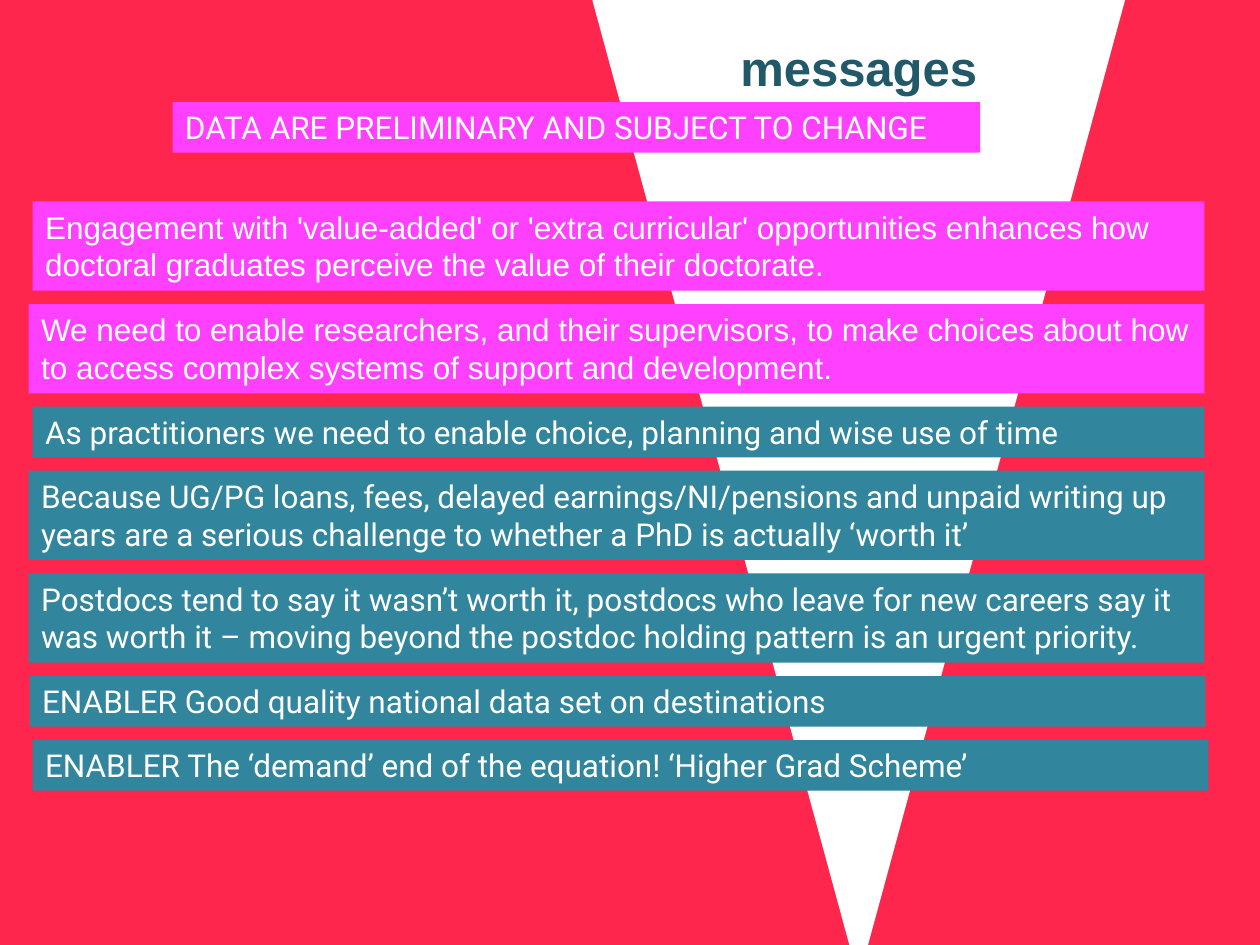
import pptx
import pptx.dml.color
import pptx.enum.shapes
import pptx.enum.text
import pptx.util
from pptx.util import Cm

THEME = {
    "background": "FF264D",
    "wedge": "FFFFFF",
    "heading": "215968",
    "pink": "FF40FF",
    "teal": "31859C",
    "text": "FFFFFF",
    "heading_size": 28,
    "body_size": 18,
    "sans": "Arial",
    "accent": "Roboto",
}

HEADING = "messages"
CAVEAT = "DATA ARE PRELIMINARY AND SUBJECT TO CHANGE"

# text, fill, font, lines, left, width
MESSAGES = [
    ("Engagement with 'value-added' or 'extra curricular' opportunities enhances how "
     "doctoral graduates perceive the value of their doctorate.",
     "pink", "sans", 2, 0.66, 23.62),
    ("We need to enable researchers, and their supervisors, to make choices about how "
     "to access complex systems of support and development.",
     "pink", "sans", 2, 0.58, 23.7),
    ("As practitioners we need to enable choice, planning and wise use of time",
     "teal", "accent", 1, 0.66, 23.62),
    ("Because UG/PG loans, fees, delayed earnings/NI/pensions and unpaid writing up "
     "years are a serious challenge to whether a PhD is actually ‘worth it’",
     "teal", "accent", 2, 0.58, 23.7),
    ("Postdocs tend to say it wasn’t worth it, postdocs who leave for new careers say it "
     "was worth it – moving beyond the postdoc holding pattern is an urgent priority.",
     "teal", "accent", 2, 0.58, 23.7),
    ("ENABLER Good quality national data set on destinations",
     "teal", "accent", 1, 0.6, 23.7),
    ("ENABLER The ‘demand’ end of the equation! ‘Higher Grad Scheme’",
     "teal", "accent", 1, 0.66, 23.7),
]

BAR_HEIGHTS = {1: 1.02, 2: 1.8}
FIRST_TOP = 4.06
GAP = 0.27


def color(key):
    return pptx.dml.color.RGBColor.from_string(THEME[key])


def add_panel(slide, kind, box, fill):
    panel = slide.shapes.add_shape(kind, *map(Cm, box))
    panel.shadow.inherit = False
    panel.fill.solid()
    panel.fill.fore_color.rgb = color(fill)
    panel.line.fill.background()
    return panel


def write(holder, text, font, size, ink, align, bold=False):
    frame = holder.text_frame
    frame.text = text
    frame.word_wrap = True
    frame.vertical_anchor = pptx.enum.text.MSO_ANCHOR.TOP
    frame.auto_size = pptx.enum.text.MSO_AUTO_SIZE.SHAPE_TO_FIT_TEXT
    paragraph = frame.paragraphs[0]
    paragraph.alignment = align
    style = paragraph.runs[0].font
    style.name = THEME[font]
    style.size = pptx.util.Pt(THEME[size])
    style.bold = bold
    style.color.rgb = color(ink)


def add_bar(slide, text, fill, font, box):
    bar = add_panel(slide, pptx.enum.shapes.MSO_SHAPE.RECTANGLE, box, fill)
    write(bar, text, font, "body_size", "text", pptx.enum.text.PP_ALIGN.LEFT)


def main():
    deck = pptx.Presentation()
    deck.slide_width, deck.slide_height = Cm(25.4), Cm(19.05)
    slide = deck.slides.add_slide(deck.slide_layouts[6])
    slide.background.fill.solid()
    slide.background.fill.fore_color.rgb = color("background")

    wedge = add_panel(slide, pptx.enum.shapes.MSO_SHAPE.ISOSCELES_TRIANGLE,
                      (11.94, 0, 10.74, 19.74), "wedge")
    wedge.rotation = 180

    heading = slide.shapes.add_textbox(Cm(13.87), Cm(0.64), Cm(6.88), Cm(1.45))
    write(heading, HEADING, "sans", "heading_size", "heading",
          pptx.enum.text.PP_ALIGN.CENTER, bold=True)

    top = FIRST_TOP
    for text, fill, font, lines, left, width in MESSAGES:
        height = BAR_HEIGHTS[lines]
        add_bar(slide, text, fill, font, (left, top, width, height))
        top += height + GAP

    add_bar(slide, CAVEAT, "pink", "accent", (3.48, 2.06, 16.28, BAR_HEIGHTS[1]))
    deck.save("out.pptx")


if __name__ == "__main__":
    main()
